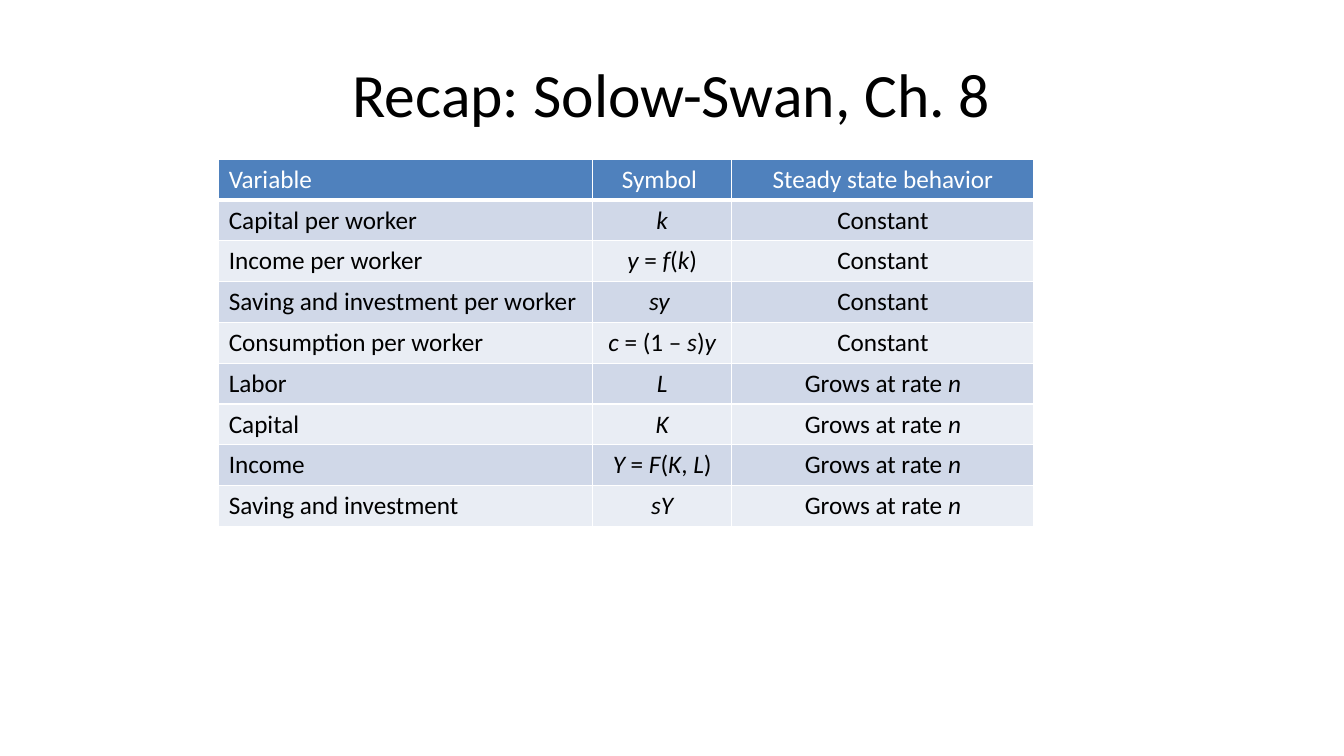
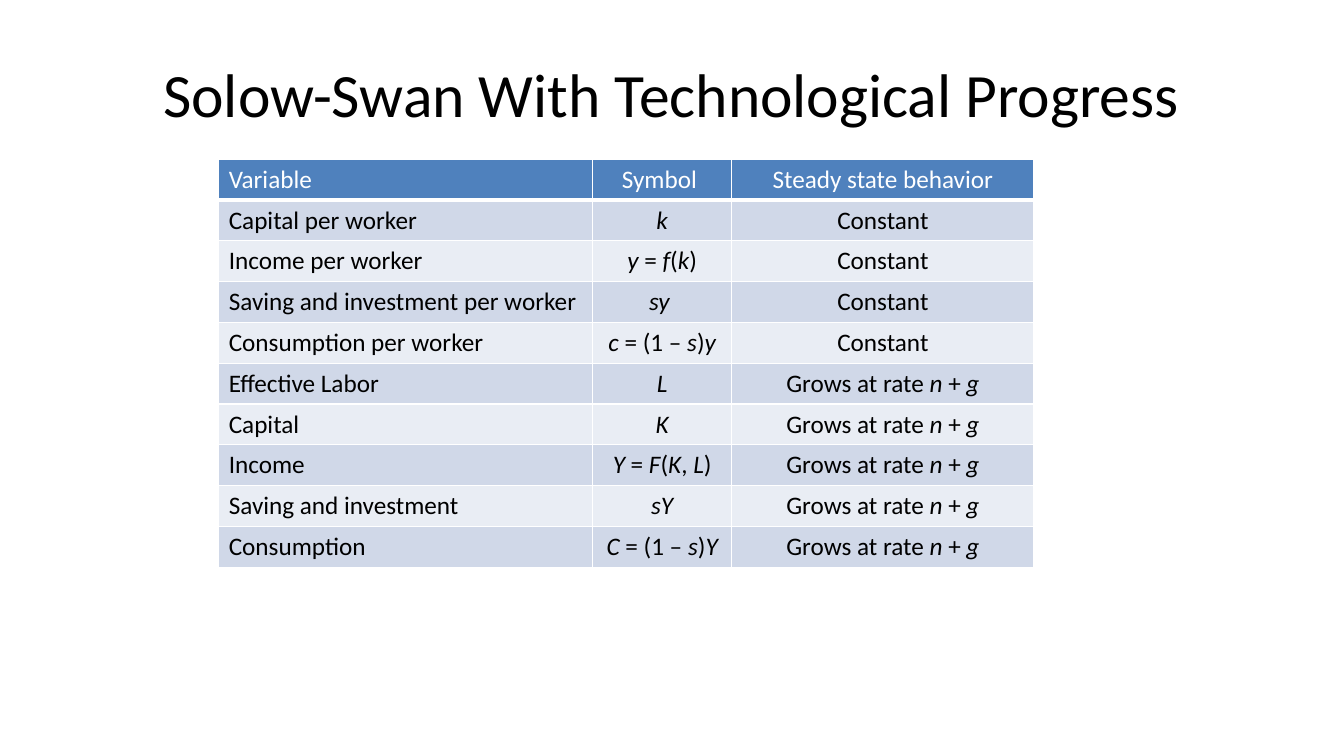
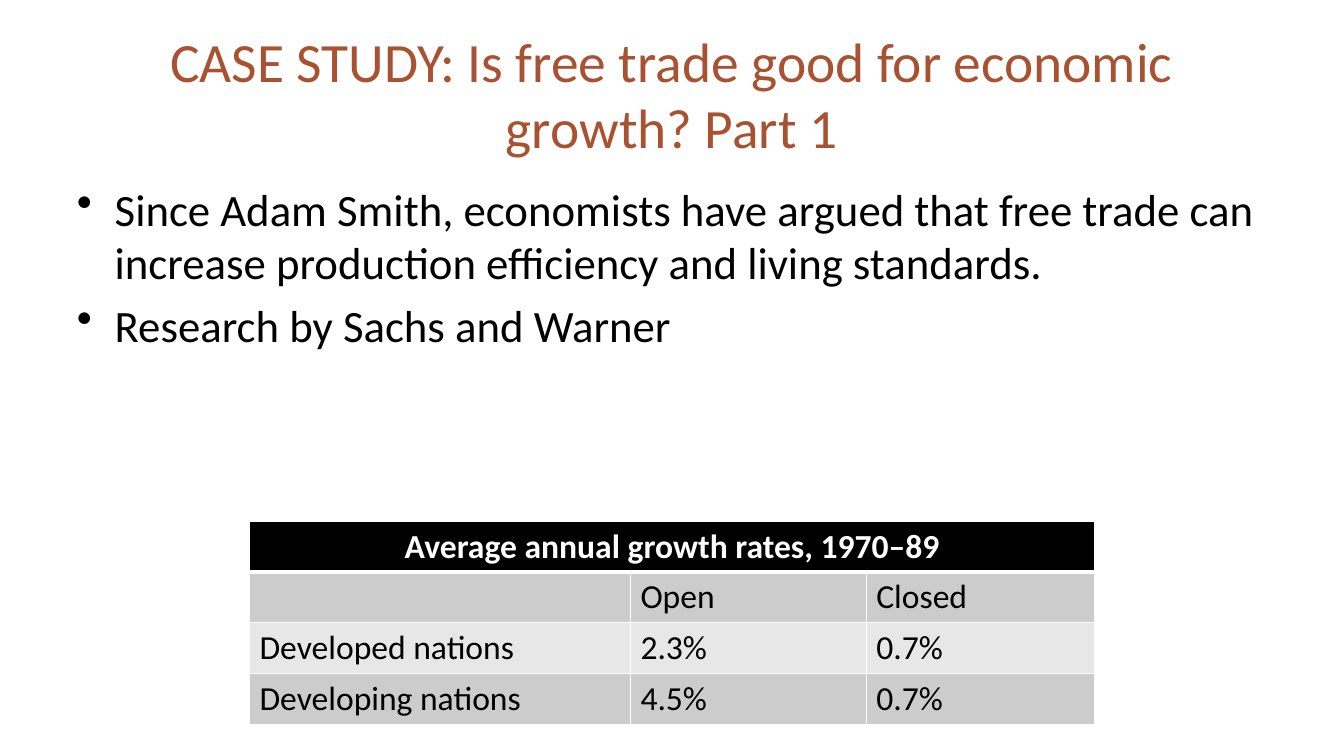
import dataclasses

import pptx
import pptx.dml.color
import pptx.enum.text
import pptx.oxml
import pptx.oxml.ns
import pptx.util

PX = 4572  # EMU per px, 200 px to the inch
LEFT = pptx.enum.text.PP_ALIGN.LEFT
CENTER = pptx.enum.text.PP_ALIGN.CENTER


@dataclasses.dataclass(frozen=True)
class Theme:
    font: str = "Calibri"
    ink: str = "000000"
    paper: str = "FFFFFF"
    rust: str = "A85232"
    blue_table: tuple = ("4F81BD", "D0D8E8", "E9EDF4")
    gray_table: tuple = ("000000", "CCCCCC", "E7E7E7")
    title_size: float = 44
    case_title_size: float = 39.6
    body_size: float = 32
    variable_size: float = 18
    growth_size: float = 24


theme = Theme()


def write(paragraph, text, size, color, align=LEFT, bold=False):
    """Fill a paragraph; words between asterisks are italic."""
    paragraph.alignment = align
    font = paragraph.font
    font.name, font.size, font.bold = theme.font, pptx.util.Pt(size), bold
    font.color.rgb = pptx.dml.color.RGBColor.from_string(color)
    for index, piece in enumerate(text.split("*")):
        if piece:
            run = paragraph.add_run()
            run.text = piece
            if index % 2:
                run.font.italic = True


def add_grid(slide, left, top, widths, row_height, rows, fills, size, aligns, bold_header=False):
    """Add a banded table; a header row with one text spans all columns."""
    table = slide.shapes.add_table(
        len(rows), len(widths), left * PX, top * PX,
        sum(widths) * PX, len(rows) * row_height * PX).table
    table.first_row = table.horz_banding = False
    for column, width in zip(table.columns, widths):
        column.width = width * PX
    for row_index, texts in enumerate(rows):
        header = row_index == 0
        table.rows[row_index].height = row_height * PX
        if len(texts) == 1:
            table.cell(row_index, 0).merge(table.cell(row_index, len(widths) - 1))
        fill = fills[0] if header else fills[2 - row_index % 2]
        for column_index in range(len(widths)):
            cell = table.cell(row_index, column_index)
            cell.fill.solid()
            cell.fill.fore_color.rgb = pptx.dml.color.RGBColor.from_string(fill)
            # Borders come before the fill in the cell properties
            for position, side in enumerate("LRTB"):
                points = 3 if header and side == "B" else 1
                border = pptx.oxml.parse_xml(
                    f'<a:ln{side} {pptx.oxml.ns.nsdecls("a")} w="{points * 12700}">'
                    f'<a:solidFill><a:srgbClr val="{theme.paper}"/></a:solidFill></a:ln{side}>')
                cell._tc.get_or_add_tcPr().insert(position, border)
            if column_index < len(texts):
                align = CENTER if len(texts) == 1 else aligns[column_index]
                write(cell.text_frame.paragraphs[0], texts[column_index], size,
                      theme.paper if header else theme.ink, align, header and bold_header)


presentation = pptx.Presentation()
presentation.slide_width = 2667 * PX
presentation.slide_height = 1500 * PX

# Slides and their titles
titles = [
    ("Recap: Solow-Swan, Ch. 8", theme.title_size, theme.ink),
    ("Solow-Swan With Technological Progress", theme.title_size, theme.ink),
    ("CASE STUDY: Is free trade good for economic growth? Part 1",
     theme.case_title_size, theme.rust),
]
slides = []
for title, size, color in titles:
    slide = presentation.slides.add_slide(presentation.slide_layouts[6])
    title_frame = slide.shapes.add_textbox(133 * PX, 60 * PX, 2400 * PX, 250 * PX).text_frame
    title_frame.word_wrap = True
    title_frame.vertical_anchor = pptx.enum.text.MSO_ANCHOR.MIDDLE
    write(title_frame.paragraphs[0], title, size, color, CENTER)
    slides.append(slide)
recap_slide, progress_slide, case_slide = slides

# Steady state tables: constant per-worker variables, then growing totals
per_worker = [
    ("Capital per worker", "*k*"),
    ("Income per worker", "*y* = *f*(*k*)"),
    ("Saving and investment per worker", "*sy *"),
    ("Consumption per worker", "*c *= (1 – *s*)*y*"),
]
totals = [
    ("Capital", "*K*"),
    ("Income", "*Y* = *F*(*K*, *L*)"),
    ("Saving and investment", "*sY*"),
]
consumption = ("Consumption", "*C *= (1 – *s*)*Y*")
for slide, labor, growth, growing in (
        (recap_slide, "Labor", "*n*", totals),
        (progress_slide, "Effective Labor", "*n *+* g*", totals + [consumption])):
    rows = [("Variable", "Symbol ", "Steady state behavior")]
    rows += [(*variable, "Constant") for variable in per_worker]
    rows += [(*variable, "Grows at rate " + growth) for variable in [(labor, "*L*")] + growing]
    add_grid(slide, 434, 316, (742, 276, 600), 81, rows, theme.blue_table,
             theme.variable_size, (LEFT, CENTER, CENTER))

# Case study bullets
body_frame = case_slide.shapes.add_textbox(133 * PX, 350 * PX, 2400 * PX, 990 * PX).text_frame
body_frame.word_wrap = True
bullets = [
    "Since Adam Smith, economists have argued that free trade can increase "
    "production efficiency and living standards.",
    "Research by Sachs and Warner",
]
for index, text in enumerate(bullets):
    paragraph = body_frame.add_paragraph() if index else body_frame.paragraphs[0]
    write(paragraph, text, theme.body_size, theme.ink)
    paragraph.space_before = pptx.util.Pt(6)
    properties = paragraph._p.get_or_add_pPr()
    properties.set("marL", str(75 * PX))
    properties.set("indent", str(-75 * PX))
    bullet = pptx.oxml.parse_xml(f'<a:buChar {pptx.oxml.ns.nsdecls("a")} char="•"/>')
    properties.find(pptx.oxml.ns.qn("a:defRPr")).addprevious(bullet)

# Case study growth rates
growth_rows = [
    ("Average annual growth rates, 1970–89",),
    ("", "Open", "Closed"),
    ("Developed nations", "2.3%", "0.7%"),
    ("Developing nations", "4.5%", "0.7%"),
]
add_grid(case_slide, 495, 1034, (756, 468, 454), 101, growth_rows, theme.gray_table,
         theme.growth_size, (LEFT, LEFT, LEFT), bold_header=True)

presentation.save("out.pptx")
